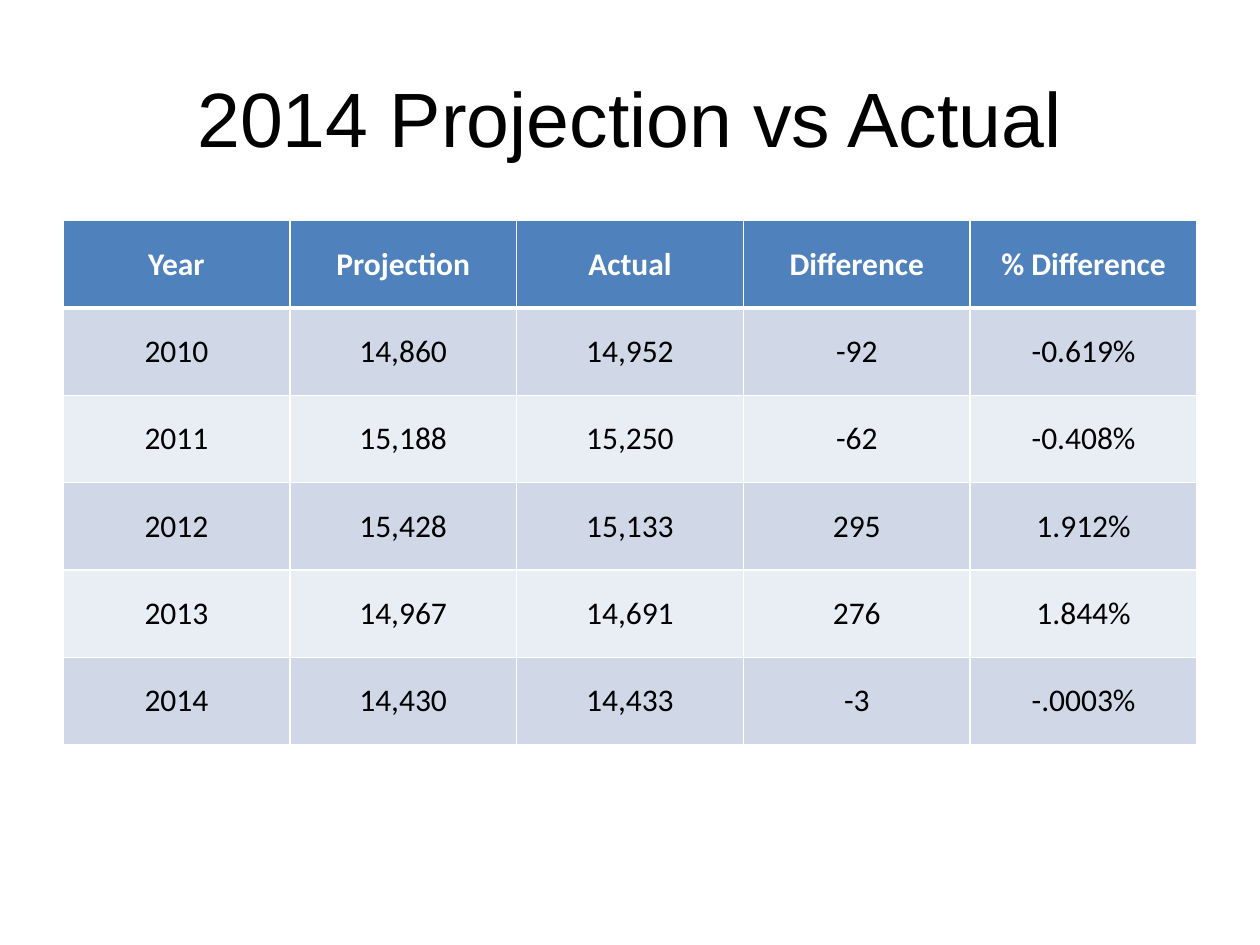
from lxml.etree import SubElement
from pptx import Presentation
from pptx.dml.color import RGBColor
from pptx.enum.text import MSO_ANCHOR, PP_ALIGN
from pptx.oxml.ns import qn
from pptx.util import Cm, Pt

TITLE = "2014 Projection vs Actual"
ROWS = [
    ("Year", "Projection", "Actual", "Difference", "% Difference"),
    ("2010", "14,860", "14,952", "-92", "-0.619%"),
    ("2011", "15,188", "15,250", "-62", "-0.408%"),
    ("2012", "15,428", "15,133", "295", "1.912%"),
    ("2013", "14,967", "14,691", "276", "1.844%"),
    ("2014", "14,430", "14,433", "-3", "-.0003%"),
]
HEADER_FILL = "4F81BD"
BAND_FILLS = ("D0D8E8", "E9EDF4")
LEFT, WIDTH = 1.27, 22.86
TITLE_TOP, TITLE_HEIGHT = 0.76, 3.18
TABLE_TOP, ROW_HEIGHT = 4.45, 1.76
TITLE_FORMAT = {"name": "Arial", "size": Pt(44), "bold": False}
HEADER_FORMAT = {"name": "Calibri", "size": Pt(18), "bold": True}
BODY_FORMAT = {**HEADER_FORMAT, "bold": False}


def rgb(value):
    """Turn a hex string into a colour."""
    return RGBColor.from_string(value)


def write(tf, text, color, formats):
    """Write one centred, formatted line into a text frame."""
    p = tf.paragraphs[0]
    p.alignment = PP_ALIGN.CENTER
    r = p.add_run()
    r.text = text
    r.font.color.rgb = rgb(color)
    for name, value in formats.items():
        setattr(r.font, name, value)


def set_borders(cell, widths):
    """Give a cell white borders with a width in points per side."""
    tc_pr = cell._tc.get_or_add_tcPr()
    for side, width in widths.items():
        line = SubElement(tc_pr, qn(f"a:ln{side}"), w=str(Pt(width)))
        fill = SubElement(line, qn("a:solidFill"))
        SubElement(fill, qn("a:srgbClr"), val="FFFFFF")


def add_title(s):
    """Place and fill the title placeholder."""
    sp = s.shapes.title
    sp.left, sp.top = Cm(LEFT), Cm(TITLE_TOP)
    sp.width, sp.height = Cm(WIDTH), Cm(TITLE_HEIGHT)
    sp.text_frame.vertical_anchor = MSO_ANCHOR.MIDDLE
    write(sp.text_frame, TITLE, "000000", TITLE_FORMAT)


def add_comparison_table(s):
    """Add the banded table of projected and actual figures."""
    table = s.shapes.add_table(
        len(ROWS), len(ROWS[0]), Cm(LEFT), Cm(TABLE_TOP),
        Cm(WIDTH), Cm(ROW_HEIGHT * len(ROWS)),
    ).table
    for i, row in enumerate(ROWS):
        header = i == 0
        fill = HEADER_FILL if header else BAND_FILLS[(i - 1) % 2]
        color = "FFFFFF" if header else "000000"
        formats = HEADER_FORMAT if header else BODY_FORMAT
        widths = {"L": 1, "R": 1, "T": 3 if i == 1 else 1, "B": 3 if header else 1}
        for j, text in enumerate(row):
            cell = table.cell(i, j)
            cell.vertical_anchor = MSO_ANCHOR.MIDDLE
            set_borders(cell, widths)
            cell.fill.solid()
            cell.fill.fore_color.rgb = rgb(fill)
            write(cell.text_frame, text, color, formats)


def main():
    """Build and save the slide."""
    prs = Presentation()
    prs.slide_width, prs.slide_height = Cm(25.4), Cm(19.05)
    s = prs.slides.add_slide(prs.slide_layouts[5])
    add_title(s)
    add_comparison_table(s)
    prs.save("out.pptx")


if __name__ == "__main__":
    main()
